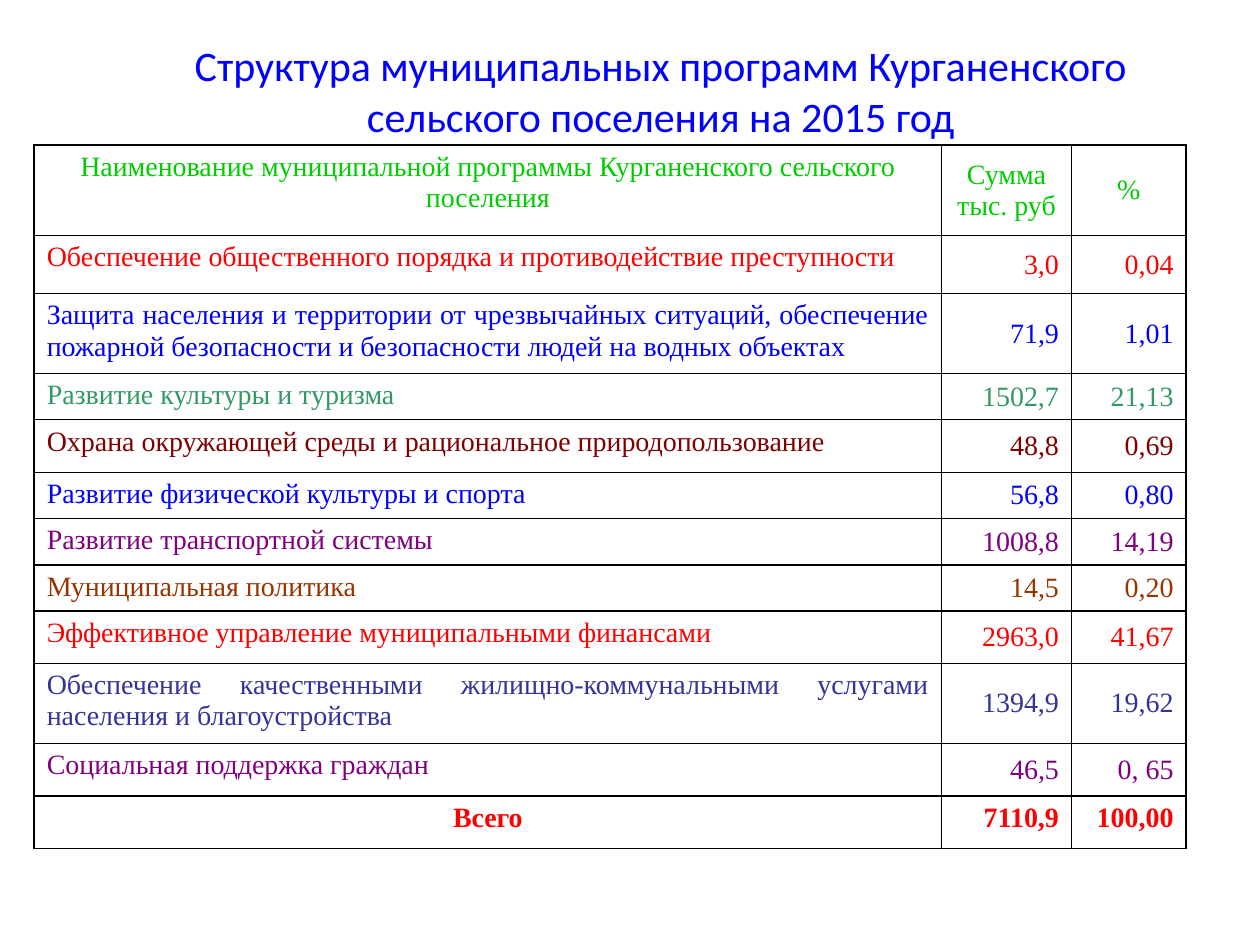
"""Build the slide on the structure of municipal programmes for 2015."""
import dataclasses

import lxml.etree
import pptx
import pptx.dml.color
import pptx.enum.text
import pptx.oxml.ns
import pptx.util

Cm = pptx.util.Cm
Align = pptx.enum.text.PP_ALIGN
Anchor = pptx.enum.text.MSO_ANCHOR


@dataclasses.dataclass(frozen=True)
class Theme:
    """Fonts, type sizes and colours of the slide."""

    title_font: str = "Calibri"
    title_size: int = 24
    table_font: str = "Times New Roman"
    table_size: int = 16
    border: str = "000000"
    border_width: int = 1
    blue: str = "0000FF"
    red: str = "FF0000"
    lime: str = "00CC00"
    green: str = "339966"
    maroon: str = "800000"
    purple: str = "800080"
    brown: str = "993300"
    indigo: str = "333399"


THEME = Theme()
TITLE = "Структура муниципальных программ Курганенского сельского поселения на 2015 год"
HEADINGS = ("Наименование муниципальной программы Курганенского сельского поселения",
            "Сумма тыс. руб", "%")
PROGRAMMES = [
    ("Обеспечение общественного порядка и противодействие преступности",
     "3,0", "0,04", THEME.red, 1.17),
    ("Защита населения и территории от чрезвычайных ситуаций, обеспечение "
     "пожарной безопасности и безопасности людей на водных объектах",
     "71,9", "1,01", THEME.blue, 1.51),
    ("Развитие культуры и туризма", "1502,7", "21,13", THEME.green, 0.88),
    ("Охрана окружающей среды и рациональное природопользование",
     "48,8", "0,69", THEME.maroon, 1.06),
    ("Развитие физической культуры и спорта", "56,8", "0,80", THEME.blue, 0.88),
    ("Развитие транспортной системы", "1008,8", "14,19", THEME.purple, 0.88),
    ("Муниципальная политика", "14,5", "0,20", THEME.brown, 0.88),
    ("Эффективное управление муниципальными финансами",
     "2963,0", "41,67", THEME.red, 1.06),
    ("Обеспечение качественными жилищно-коммунальными услугами "
     "населения и благоустройства", "1394,9", "19,62", THEME.indigo, 1.51),
    ("Социальная поддержка граждан", "46,5", "0, 65", THEME.purple, 1.06),
]
TOTAL = ("Всего", "7110,9", "100,00")
HEADING_HEIGHT = 1.83
TOTAL_HEIGHT = 1.06
COLUMN_WIDTHS = (18.29, 2.62, 2.31)


def write_text(frame, wording, font, size, colour, align, bold=False):
    """Write one paragraph in a single style."""
    paragraph = frame.paragraphs[0]
    paragraph.text = wording
    paragraph.alignment = align
    paragraph.font.name = font
    paragraph.font.size = pptx.util.Pt(size)
    paragraph.font.bold = bold
    paragraph.font.color.rgb = pptx.dml.color.RGBColor.from_string(colour)


def add_title(slide):
    """Add the centred slide title."""
    title = slide.shapes.add_textbox(Cm(2.54), Cm(0.71), Cm(21.56), Cm(2.21)).text_frame
    title.word_wrap = True
    title.vertical_anchor = Anchor.MIDDLE
    write_text(title, TITLE, THEME.title_font, THEME.title_size, THEME.blue, Align.CENTER)


def draw_borders(cell):
    """Outline all four sides of a cell."""
    qn = pptx.oxml.ns.qn
    properties = cell._tc.get_or_add_tcPr()
    for side in ("a:lnL", "a:lnR", "a:lnT", "a:lnB"):
        line = lxml.etree.SubElement(properties, qn(side),
                                     w=str(pptx.util.Pt(THEME.border_width)))
        fill = lxml.etree.SubElement(line, qn("a:solidFill"))
        lxml.etree.SubElement(fill, qn("a:srgbClr"), val=THEME.border)


def fill_row(row, wordings, colour, aligns, anchors, bold=False):
    """Write and outline the cells of one table row."""
    for cell, wording, align, anchor in zip(row.cells, wordings, aligns, anchors):
        draw_borders(cell)
        cell.fill.background()
        cell.vertical_anchor = anchor
        write_text(cell.text_frame, wording, THEME.table_font, THEME.table_size,
                   colour, align, bold)


def add_programme_table(slide):
    """Add the table of programmes with headings and total."""
    heights = [HEADING_HEIGHT, *(programme[-1] for programme in PROGRAMMES), TOTAL_HEIGHT]
    table = slide.shapes.add_table(
        len(heights), len(COLUMN_WIDTHS), Cm(0.69), Cm(2.92),
        Cm(sum(COLUMN_WIDTHS)), Cm(sum(heights))).table
    table.first_row = False
    table.horz_banding = False
    for column, width in zip(table.columns, COLUMN_WIDTHS):
        column.width = Cm(width)
    for row, height in zip(table.rows, heights):
        row.height = Cm(height)

    rows = list(table.rows)
    middle_figures = (Anchor.TOP, Anchor.MIDDLE, Anchor.MIDDLE)
    fill_row(rows[0], HEADINGS, THEME.lime, (Align.CENTER,) * 3, middle_figures)
    for row, (name, amount, share, colour, _) in zip(rows[1:], PROGRAMMES):
        fill_row(row, (name, amount, share), colour,
                 (Align.JUSTIFY, Align.RIGHT, Align.RIGHT), middle_figures)
    fill_row(rows[-1], TOTAL, THEME.red,
             (Align.CENTER, Align.RIGHT, Align.RIGHT), (Anchor.TOP,) * 3, bold=True)


def main():
    """Create and save the presentation."""
    presentation = pptx.Presentation()
    presentation.slide_width = Cm(25.4)
    presentation.slide_height = Cm(19.05)
    slide = presentation.slides.add_slide(presentation.slide_layouts[6])
    add_title(slide)
    add_programme_table(slide)
    presentation.save("out.pptx")


if __name__ == "__main__":
    main()
